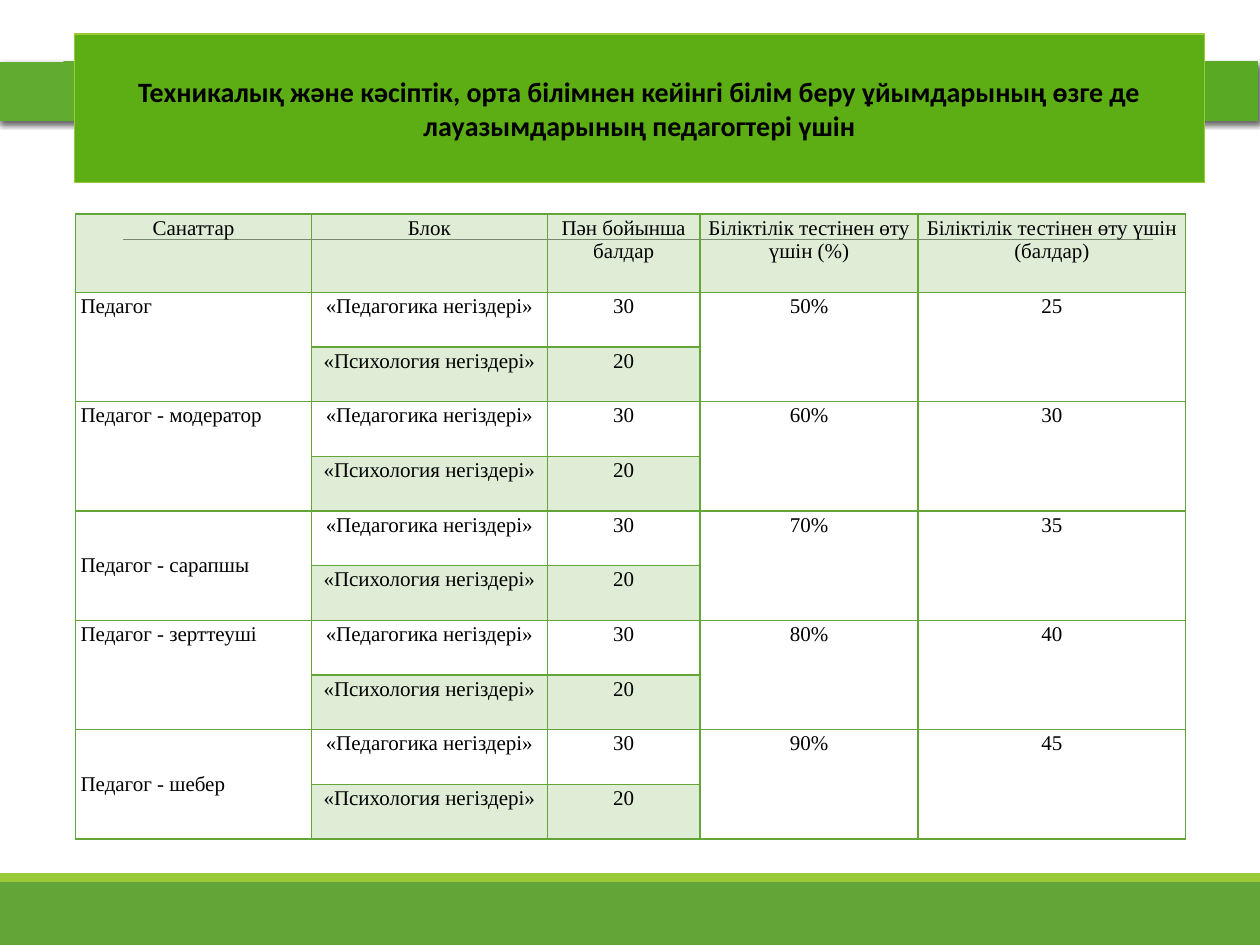
from dataclasses import dataclass

from lxml.etree import SubElement
from pptx import Presentation
from pptx.dml.color import RGBColor
from pptx.enum.shapes import MSO_CONNECTOR, MSO_SHAPE
from pptx.enum.text import MSO_ANCHOR, MSO_AUTO_SIZE, PP_ALIGN
from pptx.oxml import parse_xml
from pptx.oxml.ns import nsdecls, qn
from pptx.util import Inches, Pt


@dataclass(frozen=True)
class Theme:
    green: str = "63A537"
    lime: str = "99CB38"
    banner: str = "5DAE14"
    rule: str = "808080"
    text: str = "000000"
    ribbon: tuple = ((0, "59A924"), (34, "5BA827"), (70, "5BAD25"), (100, "62AB31"))
    tint: int = 20  # opacity of tinted cells, percent
    title_font: str = "Calibri"
    title_size: int = 16
    table_font: str = "Times New Roman"
    table_size: int = 12


THEME = Theme()
UNIT = Inches(0.1)  # the slide is a grid of 100 columns by 75 rows


@dataclass(frozen=True)
class Box:
    left: float
    top: float
    width: float
    height: float

    def emu(self):
        return [round(v * UNIT) for v in (self.left, self.top, self.width, self.height)]


TITLE = ("Техникалық және кәсіптік, орта білімнен кейінгі білім беру ұйымдарының "
         "өзге де лауазымдарының педагогтері үшін")
HEADERS = ["Санаттар", "Блок", "Пән бойынша балдар",
           "Біліктілік тестінен өту үшін (%)", "Біліктілік тестінен өту үшін (балдар)"]
BLOCKS = [("«Педагогика негіздері»", "30"), ("«Психология негіздері»", "20")]
# category, pass share, pass points, vertical anchor of the category
CATEGORIES = [
    ("Педагог", "50%", "25", MSO_ANCHOR.TOP),
    ("Педагог - модератор", "60%", "30", MSO_ANCHOR.TOP),
    ("Педагог - сарапшы", "70%", "35", MSO_ANCHOR.MIDDLE),
    ("Педагог - зерттеуші", "80%", "40", MSO_ANCHOR.TOP),
    ("Педагог - шебер", "90%", "45", MSO_ANCHOR.MIDDLE),
]
COLUMN_SHARES = [1.87, 1.87, 1.21, 1.73, 2.12]
HEADER_SHARE = 0.125


def rgb(value):
    return RGBColor.from_string(value)


def add_band(slide, box, color):
    band = slide.shapes.add_shape(MSO_SHAPE.RECTANGLE, *box.emu())
    band.shadow.inherit = False
    band.fill.solid()
    band.fill.fore_color.rgb = rgb(color)
    band.line.fill.background()
    return band


def add_footer(slide, box):
    stripe = 0.7
    add_band(slide, Box(box.left, box.top + stripe, box.width, box.height - stripe), THEME.green)
    add_band(slide, Box(box.left, box.top, box.width, stripe), THEME.lime)


def add_rule(slide, box):
    left, top, width, _ = box.emu()
    rule = slide.shapes.add_connector(MSO_CONNECTOR.STRAIGHT, left, top, left + width, top)
    rule.line.color.rgb = rgb(THEME.rule)
    rule.line.width = Pt(0.5)
    SubElement(rule.element.spPr, qn("a:effectLst"))


def add_ribbon(slide, box):
    ribbon = add_band(slide, box, THEME.green)
    properties = ribbon.element.spPr
    # Radial gradient
    stops = "".join(f'<a:gs pos="{pos * 1000}"><a:srgbClr val="{color}"/></a:gs>'
                    for pos, color in THEME.ribbon)
    gradient = parse_xml(
        f'<a:gradFill {nsdecls("a")} rotWithShape="1"><a:gsLst>{stops}</a:gsLst>'
        '<a:path path="circle"><a:fillToRect l="100000" t="100000"/></a:path></a:gradFill>')
    properties.replace(properties.find(qn("a:solidFill")), gradient)
    # Soft shadow
    shadow = parse_xml(
        f'<a:effectLst {nsdecls("a")}><a:outerShdw blurRad="{Pt(3.5)}" dist="{Pt(2)}" '
        'dir="2700000"><a:srgbClr val="000000"><a:alpha val="60000"/></a:srgbClr>'
        '</a:outerShdw></a:effectLst>')
    properties.replace(properties.find(qn("a:effectLst")), shadow)
    return ribbon


def place_title(slide, box, ribbon):
    title = slide.shapes.title
    title.left, title.top, title.width, title.height = box.emu()
    title.fill.solid()
    title.fill.fore_color.rgb = rgb(THEME.banner)
    title.line.color.rgb = rgb(THEME.lime)
    title.line.width = Pt(0.75)
    frame = title.text_frame
    frame.text = TITLE
    frame.word_wrap = True
    frame.auto_size = MSO_AUTO_SIZE.NONE
    frame.vertical_anchor = MSO_ANCHOR.MIDDLE
    heading = frame.paragraphs[0]
    heading.alignment = PP_ALIGN.CENTER
    heading.font.name = THEME.title_font
    heading.font.size = Pt(THEME.title_size)
    heading.font.bold = True
    heading.font.color.rgb = rgb(THEME.text)
    # The banner lies over the ribbon
    ribbon.element.addnext(title.element)


def format_cell(cell, tinted, align):
    cell.margin_left = cell.margin_right = Inches(0.04)
    cell.margin_top = cell.margin_bottom = Inches(0.02)
    paragraph = cell.text_frame.paragraphs[0]
    paragraph.alignment = align
    paragraph.font.name = THEME.table_font
    paragraph.font.size = Pt(THEME.table_size)
    paragraph.font.color.rgb = rgb(THEME.text)
    properties = cell._tc.get_or_add_tcPr()
    if tinted:
        cell.fill.solid()
        cell.fill.fore_color.rgb = rgb(THEME.green)
        tint = properties.find(".//" + qn("a:srgbClr"))
        SubElement(tint, qn("a:alpha"), val=str(THEME.tint * 1000))
    else:
        cell.fill.background()
    # Borders come before the fill
    for index, side in enumerate(("lnL", "lnR", "lnT", "lnB")):
        properties.insert(index, parse_xml(
            f'<a:{side} {nsdecls("a")} w="{Pt(1)}"><a:solidFill>'
            f'<a:srgbClr val="{THEME.green}"/></a:solidFill></a:{side}>'))


def add_score_table(slide, box):
    step = len(BLOCKS)
    row_count = 1 + step * len(CATEGORIES)
    left, top, width, height = box.emu()
    table = slide.shapes.add_table(row_count, len(HEADERS), left, top, width, height).table
    table.first_row = table.horz_banding = False
    for column, share in zip(table.columns, COLUMN_SHARES):
        column.width = round(width * share / sum(COLUMN_SHARES))
    for index, row in enumerate(table.rows):
        share = (1 - HEADER_SHARE) / (row_count - 1) if index else HEADER_SHARE
        row.height = round(height * share)

    # Wording
    for column, header in enumerate(HEADERS):
        table.cell(0, column).text = header
    for group, (category, percent, points, anchor) in enumerate(CATEGORIES):
        first = 1 + group * step
        for column, text in ((0, category), (3, percent), (4, points)):
            table.cell(first, column).merge(table.cell(first + step - 1, column))
            table.cell(first, column).text = text
        table.cell(first, 0).vertical_anchor = anchor
        for offset, (block, score) in enumerate(BLOCKS):
            table.cell(first + offset, 1).text = block
            table.cell(first + offset, 2).text = score

    # Header and every second block row are tinted
    for row in range(row_count):
        for column in range(len(HEADERS)):
            tinted = row == 0 or (row % step == 0 and column in (1, 2))
            align = PP_ALIGN.LEFT if row and column == 0 else PP_ALIGN.CENTER
            format_cell(table.cell(row, column), tinted, align)


def main():
    presentation = Presentation()
    presentation.slide_width, presentation.slide_height = 100 * UNIT, 75 * UNIT
    slide = presentation.slides.add_slide(presentation.slide_layouts[5])
    add_footer(slide, Box(0, 69.3, 100, 5.7))
    add_rule(slide, Box(9.8, 19, 81.7, 0))
    ribbon = add_ribbon(slide, Box(-0.2, 4.9, 100, 4.7))
    place_title(slide, Box(5.9, 2.7, 89.7, 11.8), ribbon)
    add_score_table(slide, Box(6, 17, 88.1, 49.6))
    presentation.save("out.pptx")


if __name__ == "__main__":
    main()
